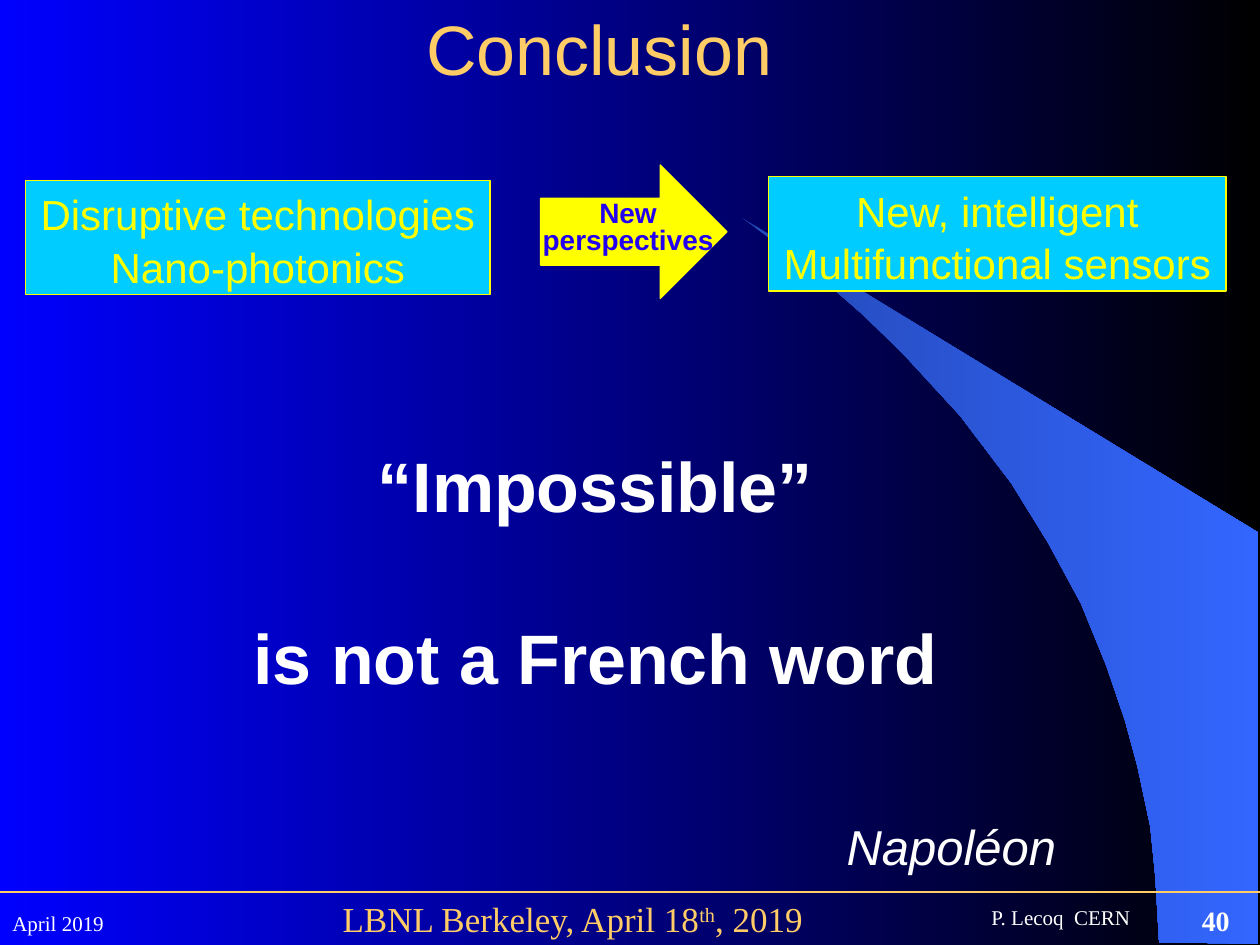
from pptx import Presentation
from pptx.dml.color import RGBColor
from pptx.enum.shapes import MSO_CONNECTOR, MSO_SHAPE
from pptx.enum.text import MSO_ANCHOR, PP_ALIGN
from pptx.oxml.ns import qn
from pptx.util import Inches, Pt
from lxml.etree import SubElement

THEME = {
    "sans": "Arial", "serif": "Times New Roman",
    "blue": "0000FF", "black": "000000", "white": "FFFFFF", "gold": "FFCC66",
    "cyan": "00CCFF", "yellow": "FFFF00", "indigo": "2300F0",
    "dusk": "2449B6", "sky": "3366FF",
    "small": 12, "label": 16, "foot": 20, "body": 24, "sign": 28, "head": 40,
    "hair": 0.75, "lead": 1.05,
}

# Content: a line is a string or a list of (text, raised) runs
TITLE = ["Conclusion"]
BOXES = [
    ((0.2, 1.43, 3.69, 0.91), ["Disruptive technologies", "Nano-photonics"]),
    ((6.1, 1.4, 3.63, 0.91), ["New, intelligent", "Multifunctional sensors"]),
]
ARROW = ["New", "perspectives"]
QUOTE = ["“Impossible”", "is not a French word"]
AUTHOR = ["Napoléon"]
VENUE = [[("LBNL Berkeley, April 18", False), ("th", True), (", 2019", False)]]
FOOT = [
    ((7.77, 7.12, 1.32, 0.3), "P. Lecoq  CERN", "small", False),
    ((9.44, 7.11, 0.46, 0.37), "40", "label", True),
    ((0, 7.17, 0.93, 0.3), "April 2019", "small", False),
]
# Crescent outline, in hundredths of an inch
CURVE = [
    (920, 748), (999, 749), (999, 423), (589, 173), (624, 199), (653, 222),
    (685, 250), (716, 280), (762, 330), (803, 384), (832, 431), (858, 479),
    (878, 528), (893, 572), (903, 609), (913, 656), (917, 696),
]


def tint(name):
    return RGBColor.from_string(THEME[name])


def blend(fill, first, last):
    fill.gradient()
    fill.gradient_angle = 0
    for stop, name, pos in zip(fill.gradient_stops, (first, last), (0, 1)):
        stop.color.rgb = tint(name)
        stop.position = pos


def write(shape, lines, size="body", face="sans", color="white", bold=False,
          italic=False, align=PP_ALIGN.CENTER, anchor=MSO_ANCHOR.TOP,
          wrap=False, lead=THEME["lead"], gap=0):
    frame = shape.text_frame
    frame.word_wrap = wrap
    frame.vertical_anchor = anchor
    for i, line in enumerate(lines):
        para = frame.add_paragraph() if i else frame.paragraphs[0]
        para.alignment = align
        para.line_spacing = lead
        if i and gap:
            para.space_before = Pt(gap)
        for text, raised in [(line, False)] if isinstance(line, str) else line:
            run = para.add_run()
            run.text = text
            font = run.font
            font.name, font.size = THEME[face], Pt(THEME[size])
            font.bold, font.italic = bold, italic
            font.color.rgb = tint(color)
            if raised:
                run._r.get_or_add_rPr().set("baseline", "30000")


def label(area, lines, **style):
    write(shapes.add_textbox(*map(Inches, area)), lines, **style)


def block(kind, area, fill):
    shape = shapes.add_shape(kind, *map(Inches, area))
    shape.shadow.inherit = False
    shape.fill.solid()
    shape.fill.fore_color.rgb = tint(fill)
    shape.line.color.rgb = tint("yellow")
    shape.line.width = Pt(THEME["hair"])
    return shape


deck = Presentation()
deck.slide_width, deck.slide_height = Inches(10), Inches(7.5)
slide = deck.slides.add_slide(deck.slide_layouts[6])
shapes = slide.shapes

# Backdrop and crescent
blend(slide.background.fill, "blue", "black")
pen = shapes.build_freeform(*CURVE[0], scale=Inches(0.01))
pen.add_line_segments(CURVE[1:], close=True)
moon = pen.convert_to_shape()
moon.shadow.inherit = False
moon.line.fill.background()
blend(moon.fill, "dusk", "sky")

# Footer
rule = shapes.add_connector(MSO_CONNECTOR.STRAIGHT, 0, Inches(7.08),
                            Inches(10), Inches(7.08))
rule.line.color.rgb = tint("gold")
rule.line.width = Pt(THEME["hair"])
SubElement(rule._element.spPr, qn("a:effectLst"))
for area, text, size, bold in FOOT:
    label(area, [text], size=size, face="serif", bold=bold,
          align=PP_ALIGN.LEFT)
label((1.42, 7.06, 6.25, 0.44), VENUE, size="foot", face="serif",
      color="gold", wrap=True)

# Title, quote and author
label((0.84, 0, 7.83, 0.92), TITLE, size="head", color="gold",
      anchor=MSO_ANCHOR.MIDDLE, wrap=True, lead=Pt(36))
label((1.88, 3.43, 5.69, 2.79), QUOTE, size="head", bold=True, gap=48)
label((6.48, 6.41, 2.14, 0.57), AUTHOR, size="sign", italic=True, wrap=True)

# Boxes joined by the arrow
for area, lines in BOXES:
    write(block(MSO_SHAPE.RECTANGLE, area, "cyan"), lines, color="yellow")
block(MSO_SHAPE.RIGHT_ARROW, (4.29, 1.31, 1.48, 1.06), "yellow")
label((4.2, 1.55, 1.57, 0.55), ARROW, size="label", color="indigo",
      bold=True, lead=Pt(15.6))

deck.save("out.pptx")
